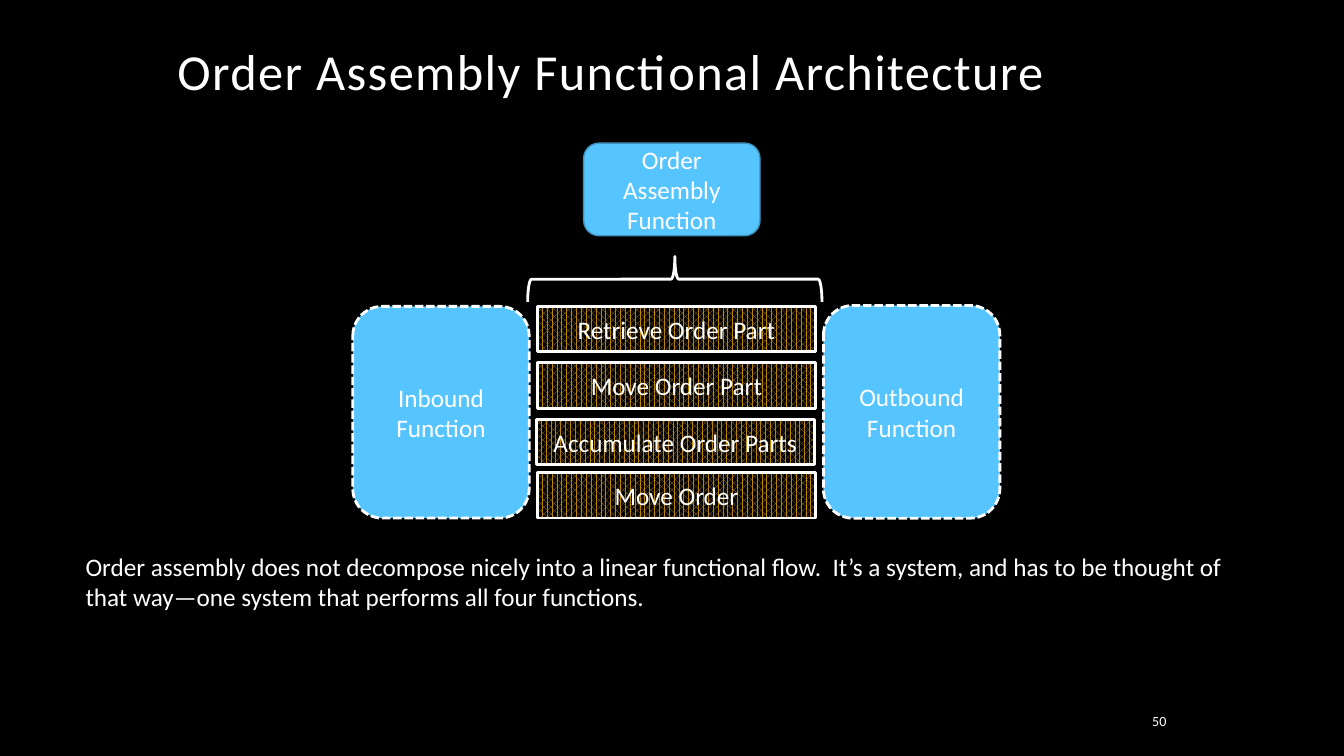
"""Build the order assembly functional architecture slide."""
from pptx import Presentation
from pptx.dml.color import RGBColor
from pptx.enum.dml import MSO_LINE, MSO_PATTERN
from pptx.enum.shapes import MSO_SHAPE
from pptx.enum.text import MSO_ANCHOR, MSO_AUTO_SIZE, PP_ALIGN
from pptx.util import Pt

BLACK = RGBColor(0x00, 0x00, 0x00)
WHITE = RGBColor(0xFF, 0xFF, 0xFF)
BLUE = RGBColor(0x56, 0xC5, 0xFF)
BLUE_EDGE = RGBColor(0x40, 0x92, 0xBD)
GOLD = RGBColor(0xBA, 0x84, 0x03)

TITLE = "Order Assembly Functional Architecture"
MAIN_FUNCTION = ("Order Assembly Function", (416.9, 102.2, 126, 66.2))
SIDE_FUNCTIONS = [
    ("Outbound Function", (588.2, 218.2, 126, 151.9)),
    ("Inbound Function", (252, 218.9, 126, 151.2)),
]
STEPS = [
    ("Retrieve Order Part", 383.8, 218.9),
    ("Move Order Part", 383.8, 259.2),
    ("Accumulate Order Parts", 383, 299.5),
    ("Move Order", 383.8, 337.7),
]
STEP_WIDTH, STEP_HEIGHT = 198.7, 32.4
BRACE = (465.8, 94.3, 32.4, 210.2)
SUMMARY = (
    "Order assembly does not decompose nicely into a linear functional flow.  "
    "It’s a system, and has to be thought of that way—one system that performs "
    "all four functions."
)
SLIDE_NUMBER = "50"


def points(box):
    """Convert a box of numbers to lengths."""
    return [Pt(value) for value in box]


def write(shape, text, size=18, alignment=PP_ALIGN.LEFT, anchor=MSO_ANCHOR.TOP):
    """Put one white paragraph in a shape."""
    frame = shape.text_frame
    frame.word_wrap = True
    frame.auto_size = MSO_AUTO_SIZE.NONE
    frame.vertical_anchor = anchor
    frame.text = text
    paragraph = frame.paragraphs[0]
    paragraph.alignment = alignment
    paragraph.font.size = Pt(size)
    paragraph.font.name = "Calibri"
    paragraph.font.color.rgb = WHITE
    return paragraph


def add_outlined(slide, kind, box, line_color=WHITE, line_width=2):
    """Add an outlined shape without a shadow."""
    shape = slide.shapes.add_shape(kind, *points(box))
    shape.shadow.inherit = False
    shape.line.color.rgb = line_color
    shape.line.width = Pt(line_width)
    return shape


def add_function(slide, text, box, **line):
    """Add a blue rounded function block."""
    shape = add_outlined(slide, MSO_SHAPE.ROUNDED_RECTANGLE, box, **line)
    shape.fill.solid()
    shape.fill.fore_color.rgb = BLUE
    write(shape, text, alignment=PP_ALIGN.CENTER, anchor=MSO_ANCHOR.MIDDLE)
    return shape


def add_step(slide, text, left, top):
    """Add a patterned step bar."""
    box = (left, top, STEP_WIDTH, STEP_HEIGHT)
    shape = add_outlined(slide, MSO_SHAPE.RECTANGLE, box)
    shape.fill.patterned()
    shape.fill.pattern = MSO_PATTERN.PERCENT_70
    shape.fill.fore_color.rgb = GOLD
    shape.fill.back_color.rgb = BLACK
    write(shape, text, alignment=PP_ALIGN.CENTER, anchor=MSO_ANCHOR.MIDDLE)


def main():
    """Draw and save the slide."""
    presentation = Presentation()
    presentation.slide_width, presentation.slide_height = Pt(960), Pt(540)
    slide = presentation.slides.add_slide(presentation.slide_layouts[5])
    slide.background.fill.solid()
    slide.background.fill.fore_color.rgb = BLACK

    title = slide.shapes.title
    title.left, title.top, title.width, title.height = points((119.5, 30.2, 720, 108))
    heading = write(title, TITLE, size=36)
    heading.line_spacing = 0.9
    heading.runs[0].font._element.set("spc", "100")

    add_function(slide, *MAIN_FUNCTION, line_color=BLUE_EDGE, line_width=1)
    brace = add_outlined(slide, MSO_SHAPE.LEFT_BRACE, BRACE)
    brace.fill.background()
    brace.rotation = 90
    for text, box in SIDE_FUNCTIONS:
        add_function(slide, text, box).line.dash_style = MSO_LINE.SQUARE_DOT
    for step in STEPS:
        add_step(slide, *step)

    summary = slide.shapes.add_textbox(*points((54, 390.2, 840, 72.7)))
    write(summary, SUMMARY)
    number = slide.shapes.add_textbox(*points((774, 504, 66.2, 21.6)))
    write(number, SLIDE_NUMBER, 10, PP_ALIGN.RIGHT, MSO_ANCHOR.MIDDLE)
    presentation.save("out.pptx")


if __name__ == "__main__":
    main()
